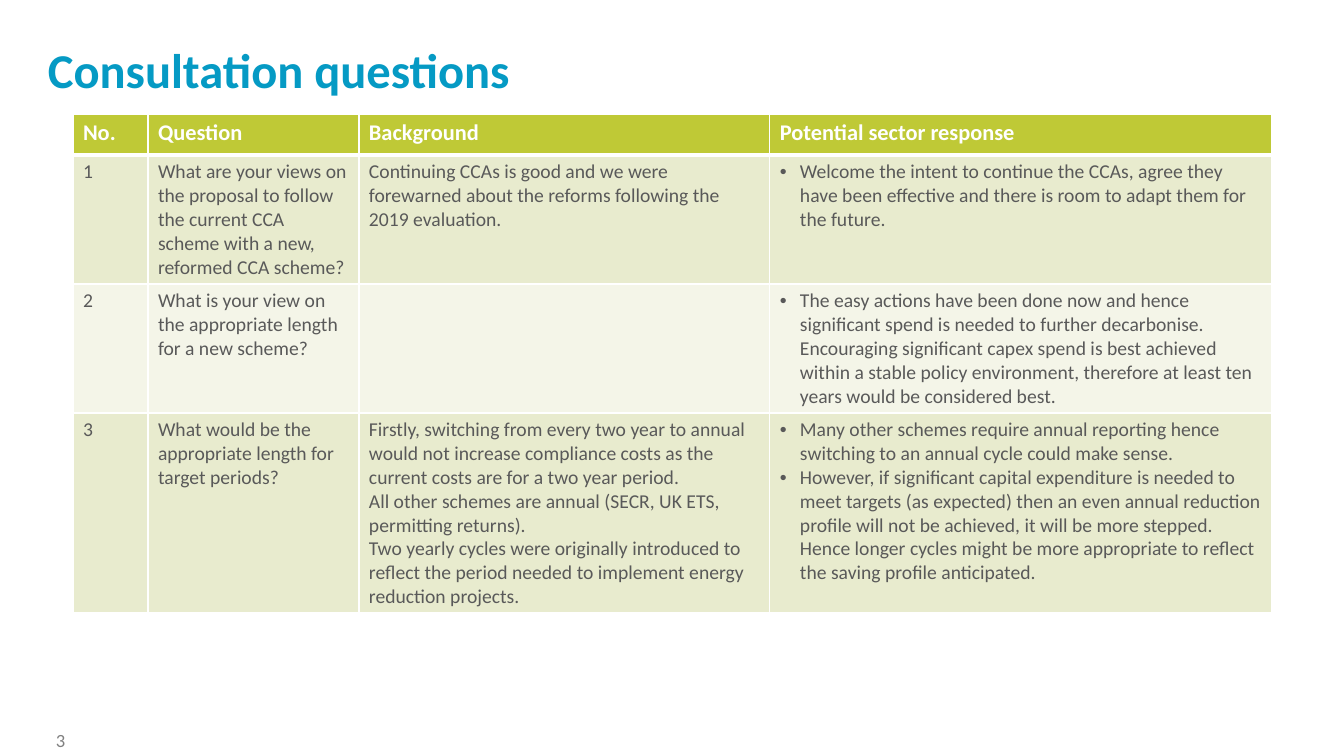
from dataclasses import dataclass

from lxml.etree import SubElement
from pptx import Presentation
from pptx.dml.color import RGBColor as Rgb
from pptx.enum.text import MSO_ANCHOR as Anchor
from pptx.oxml.ns import qn
from pptx.util import Pt

EMU_PER_PX = 914400 / 100.8


def px(length):
    return round(length * EMU_PER_PX)


@dataclass(frozen=True)
class Theme:
    font: str = "Calibri"
    title: str = "059AC4"
    page: str = "808080"
    body: str = "595959"
    white: str = "FFFFFF"
    header_fill: str = "BFC936"
    band_fills: tuple = ("E8EBCE", "F4F5E8")
    title_size: float = 34.7
    header_size: float = 16
    body_size: float = 14
    page_size: float = 13.3
    rule: float = 1
    header_rule: float = 3


class SlideBuilder:
    def __init__(self, slide, theme):
        self.slide = slide
        self.theme = theme

    def style(self, frame, size, color, bold=False):
        for paragraph in frame.paragraphs:
            for run in paragraph.runs:
                run.font.name = self.theme.font
                run.font.size = Pt(size)
                run.font.bold = bold
                run.font.color.rgb = Rgb.from_string(color)

    def text(self, box, words, size, color, bold=False, anchor=Anchor.TOP):
        frame = self.slide.shapes.add_textbox(*map(px, box)).text_frame
        frame.word_wrap = True
        frame.vertical_anchor = anchor
        frame.text = words
        self.style(frame, size, color, bold)

    def bullet(self, paragraph, indent):
        props = paragraph._p.get_or_add_pPr()
        props.set("marL", str(px(indent)))
        props.set("indent", str(-px(indent)))
        SubElement(props, qn("a:buFont"), typeface="Arial")
        SubElement(props, qn("a:buChar"), char="•")

    def borders(self, cell, **widths):
        props = cell._tc.get_or_add_tcPr()
        for side in "LRTB":
            width = widths.get(side, self.theme.rule)
            line = SubElement(props, qn(f"a:ln{side}"), w=str(Pt(width)))
            fill = SubElement(line, qn("a:solidFill"))
            SubElement(fill, qn("a:srgbClr"), val=self.theme.white)

    def cell(self, cell, words, row, bulleted):
        theme = self.theme
        is_header = row == 0
        cell.text = words
        if bulleted:
            for paragraph in cell.text_frame.paragraphs:
                self.bullet(paragraph, 20)
        # The heavy rule is shared by the header and the first question
        heavy = {0: "B", 1: "T"}.get(row)
        self.borders(cell, **({heavy: theme.header_rule} if heavy else {}))
        fill = theme.header_fill if is_header else theme.band_fills[(row - 1) % 2]
        cell.fill.solid()
        cell.fill.fore_color.rgb = Rgb.from_string(fill)
        self.style(
            cell.text_frame,
            theme.header_size if is_header else theme.body_size,
            theme.white if is_header else theme.body,
            bold=is_header,
        )

    def table(self, left, top, widths, heights, rows, bullet_column):
        table = self.slide.shapes.add_table(
            len(rows), len(widths), px(left), px(top), px(sum(widths)), px(sum(heights))
        ).table
        table.first_row = True
        table.horz_banding = False
        for column, width in zip(table.columns, widths):
            column.width = px(width)
        for table_row, height in zip(table.rows, heights):
            table_row.height = px(height)
        for r, row in enumerate(rows):
            for c, words in enumerate(row):
                self.cell(table.cell(r, c), words, r, r > 0 and c == bullet_column)


QUESTIONS = [
    ("No.", "Question", "Background", "Potential sector response"),
    (
        "1",
        "What are your views on the proposal to follow the current CCA scheme "
        "with a new, reformed CCA scheme?",
        "Continuing CCAs is good and we were forewarned about the reforms "
        "following the 2019 evaluation.",
        "Welcome the intent to continue the CCAs, agree they have been effective "
        "and there is room to adapt them for the future.",
    ),
    (
        "2",
        "What is your view on the appropriate length for a new scheme?",
        "",
        "The easy actions have been done now and hence significant spend is needed "
        "to further decarbonise. Encouraging significant capex spend is best achieved "
        "within a stable policy environment, therefore at least ten years would be "
        "considered best.",
    ),
    (
        "3",
        "What would be the appropriate length for target periods?",
        "Firstly, switching from every two year to annual would not increase "
        "compliance costs as the current costs are for a two year period.\n"
        "All other schemes are annual (SECR, UK ETS, permitting returns).\n"
        "Two yearly cycles were originally introduced to reflect the period needed "
        "to implement energy reduction projects.",
        "Many other schemes require annual reporting hence switching to an annual "
        "cycle could make sense.\n"
        "However, if significant capital expenditure is needed to meet targets "
        "(as expected) then an even annual reduction profile will not be achieved, "
        "it will be more stepped. Hence longer cycles might be more appropriate to "
        "reflect the saving profile anticipated.",
    ),
]


def main():
    deck = Presentation()
    deck.slide_width, deck.slide_height = px(1344), px(756)
    theme = Theme()
    page = SlideBuilder(deck.slides.add_slide(deck.slide_layouts[6]), theme)

    # Title
    page.text((38, 17, 1210, 104), "Consultation questions",
              theme.title_size, theme.title, bold=True, anchor=Anchor.MIDDLE)

    # Page number
    page.text((46, 724, 56, 40), "3", theme.page_size, theme.page)

    # Questions with background and response
    page.table(73, 114, widths=(75, 211, 411, 502), heights=(41, 129, 129, 200),
               rows=QUESTIONS, bullet_column=3)

    deck.save("out.pptx")


if __name__ == "__main__":
    main()
